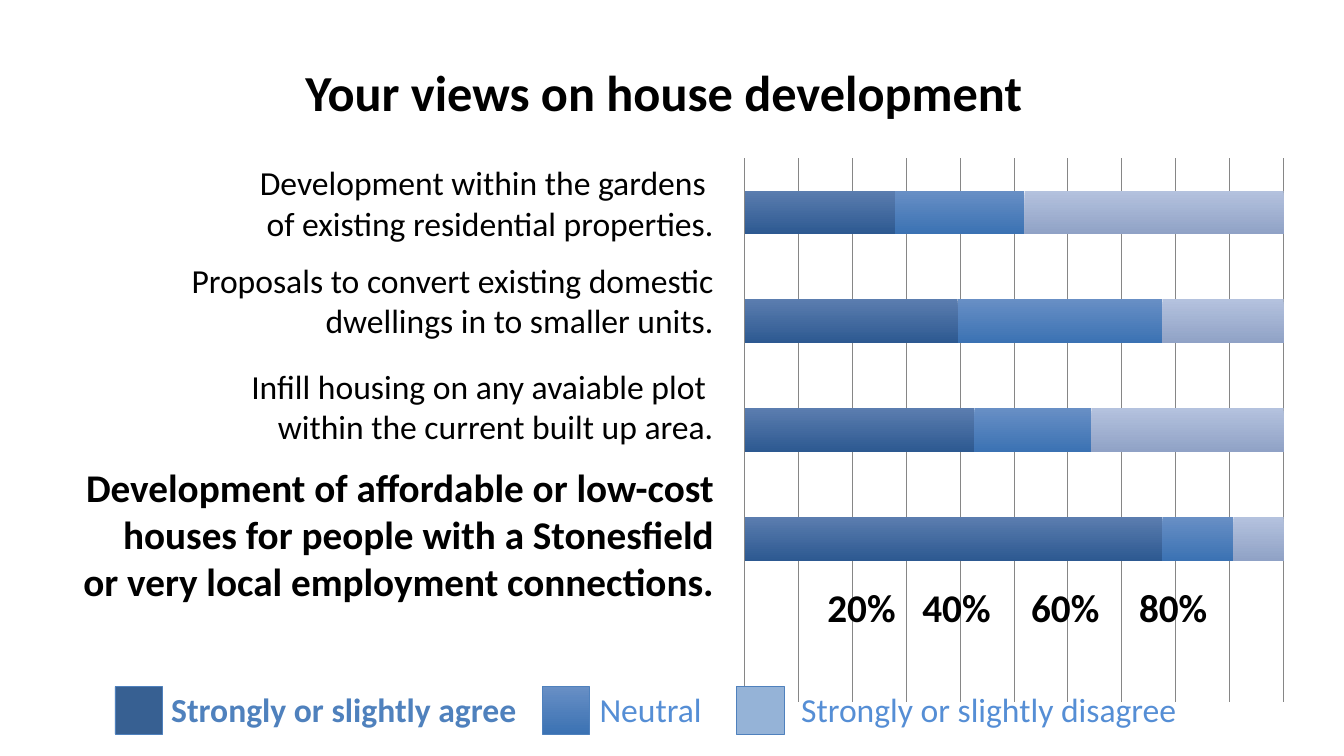
import pptx
import pptx.chart.data
import pptx.dml.color
import pptx.enum.chart
import pptx.enum.text
import pptx.oxml
import pptx.oxml.ns
import pptx.util

Pt = pptx.util.Pt
RGBColor = pptx.dml.color.RGBColor
ALIGN = pptx.enum.text.PP_ALIGN

BLACK = RGBColor(0x00, 0x00, 0x00)
GRID = RGBColor(0x86, 0x86, 0x86)
ACCENT = RGBColor(0x4F, 0x81, 0xBD)
LIGHT_TEXT = RGBColor(0x55, 0x8E, 0xD5)
AGREE = RGBColor(0x37, 0x60, 0x92)
DISAGREE = RGBColor(0x95, 0xB3, 0xD7)
AGREE_BAR = (RGBColor(0x5B, 0x7D, 0xAF), RGBColor(0x2D, 0x59, 0x91))
NEUTRAL_BAR = (RGBColor(0x68, 0x8F, 0xC5), RGBColor(0x3B, 0x72, 0xB3))
DISAGREE_BAR = (RGBColor(0xB4, 0xC2, 0xDE), RGBColor(0x90, 0xA2, 0xC6))

FONT = "Calibri"
TOTAL = 129
SERIES = [
    ("Series 1", (None, 100, 55, 51, 36), AGREE_BAR),
    ("Series 2", (None, 17, 28, 49, 31), NEUTRAL_BAR),
    ("Series 3", (None, 12, 46, 29, 62), DISAGREE_BAR),
]
STATEMENTS = [
    ("Development within the gardens \vof existing residential properties.", 24, False, 12),
    ("Proposals to convert existing domestic dwellings in to smaller units.", 24, False, 18),
    ("Infill housing on any avaiable plot \vwithin the current built up area.", 24, False, 12),
    ("Development of affordable or low-cost houses for people with a "
     "Stonesfield or very local employment connections.", 28, True, 0),
]


def place(sp, left, top, width, height):
    sp.left, sp.top, sp.width, sp.height = Pt(left), Pt(top), Pt(width), Pt(height)


def set_font(font, size, color=None, bold=None):
    font.name = FONT
    font.size = Pt(size)
    if bold is not None:
        font.bold = bold
    if color is not None:
        font.color.rgb = color


def add_paragraph_xml(p, xml):
    pPr = p._p.get_or_add_pPr()
    element = pptx.oxml.parse_xml(xml)
    pPr.find(pptx.oxml.ns.qn("a:defRPr")).addprevious(element)


def add_tabs(p, stops, align):
    tabs = "".join(f'<a:tab pos="{Pt(stop)}" algn="{align}"/>' for stop in stops)
    add_paragraph_xml(p, f'<a:tabLst {pptx.oxml.ns.nsdecls("a")}>{tabs}</a:tabLst>')


def fill_gradient(fill, colors):
    fill.gradient()
    fill.gradient_angle = 270
    for stop, color in zip(fill.gradient_stops, colors):
        stop.color.rgb = color


def add_title(s, text):
    sp = s.shapes.title
    place(sp, 211, 39.6, 540, 51)
    tf = sp.text_frame
    tf.auto_size = pptx.enum.text.MSO_AUTO_SIZE.NONE
    p = tf.paragraphs[0]
    p.text = text
    p.alignment = ALIGN.LEFT
    set_font(p.font, 36, BLACK, True)


def add_statements(s):
    sp = s.placeholders[1]
    place(sp, 51.1, 112.3, 465.8, 326.2)
    tf = sp.text_frame
    tf.auto_size = pptx.enum.text.MSO_AUTO_SIZE.NONE
    for i, (text, size, bold, after) in enumerate(STATEMENTS):
        p = tf.add_paragraph() if i else tf.paragraphs[0]
        p.text = text
        p.alignment = ALIGN.RIGHT
        p.space_before = Pt(0)
        p.space_after = Pt(after)
        set_font(p.font, size, BLACK, bold)
        pPr = p._p.get_or_add_pPr()
        pPr.set("marL", "0")
        pPr.set("indent", "0")
        add_paragraph_xml(p, f'<a:buNone {pptx.oxml.ns.nsdecls("a")}/>')


def add_views_chart(s):
    data = pptx.chart.data.CategoryChartData()
    data.categories = ["1", "2", "3", "4", "5"]
    for name, values, _ in SERIES:
        data.add_series(name, values)
    chart = s.shapes.add_chart(
        pptx.enum.chart.XL_CHART_TYPE.BAR_STACKED,
        Pt(87.1), Pt(100.1), Pt(855.4), Pt(427), data).chart
    chart.has_title = False
    chart.has_legend = False
    set_font(chart.font, 18, BLACK)

    chart.category_axis.visible = False
    axis = chart.value_axis
    axis.visible = False
    axis.minimum_scale = 0
    axis.maximum_scale = TOTAL
    axis.major_unit = TOTAL / 10
    axis.has_major_gridlines = True
    axis.major_gridlines.format.line.color.rgb = GRID
    axis.major_gridlines.format.line.width = Pt(0.75)

    plot = chart.plots[0]
    plot.gap_width = 150
    plot.overlap = 100
    plot.vary_by_categories = False
    for series, (_, _, colors) in zip(plot.series, SERIES):
        fill_gradient(series.format.fill, colors)
    set_plot_layout(chart, x=0.52, y=0.03, w=0.45, h=0.91)


def set_plot_layout(chart, **box):
    modes = '<c:xMode val="edge"/><c:yMode val="edge"/>'
    sizes = "".join(f'<c:{key} val="{value}"/>' for key, value in box.items())
    area = chart._chartSpace.chart.plotArea
    for old in area.findall(pptx.oxml.ns.qn("c:layout")):
        area.remove(old)
    area.insert(0, pptx.oxml.parse_xml(
        f'<c:layout {pptx.oxml.ns.nsdecls("c")}><c:manualLayout>'
        f'<c:layoutTarget val="inner"/>{modes}{sizes}</c:manualLayout></c:layout>'))


def add_tabbed_text(s, box, runs, size, stops, align):
    tf = s.shapes.add_textbox(*map(Pt, box)).text_frame
    tf.word_wrap = True
    p = tf.paragraphs[0]
    set_font(p.font, size)
    add_tabs(p, stops, align)
    for text, color, bold in runs:
        r = p.add_run()
        r.text = text
        r.font.bold = bold
        r.font.color.rgb = color


def add_swatch(s, left):
    sp = s.shapes.add_shape(
        pptx.enum.shapes.MSO_SHAPE.RECTANGLE, Pt(left), Pt(490.5), Pt(33.8), Pt(33.8))
    sp.shadow.inherit = False
    sp.line.color.rgb = ACCENT
    sp.line.width = Pt(0.5)
    return sp


def add_legend(s):
    runs = [("Strongly or slightly agree", ACCENT, True),
            ("\tNeutral\tStrongly or slightly disagree", LIGHT_TEXT, False)]
    add_tabbed_text(s, (115.2, 488.9, 748, 36), runs, 24, (306, 450), "l")
    agree, neutral, disagree = [add_swatch(s, left) for left in (82.1, 387.4, 526.3)]
    for sp, color in ((agree, AGREE), (disagree, DISAGREE)):
        sp.fill.solid()
        sp.fill.fore_color.rgb = color
    fill_gradient(neutral.fill, NEUTRAL_BAR)


def main():
    prs = pptx.Presentation()
    prs.slide_width, prs.slide_height = Pt(960), Pt(540)
    s = prs.slides.add_slide(prs.slide_layouts[1])
    add_title(s, "Your views on house development")
    add_views_chart(s)
    add_statements(s)
    add_tabbed_text(s, (583.9, 413.3, 323.3, 41), [("20%\t40%\t60%\t80%", BLACK, True)],
                    28, (92.2, 169.9, 247), "ctr")
    add_legend(s)
    prs.save("out.pptx")


if __name__ == "__main__":
    main()
